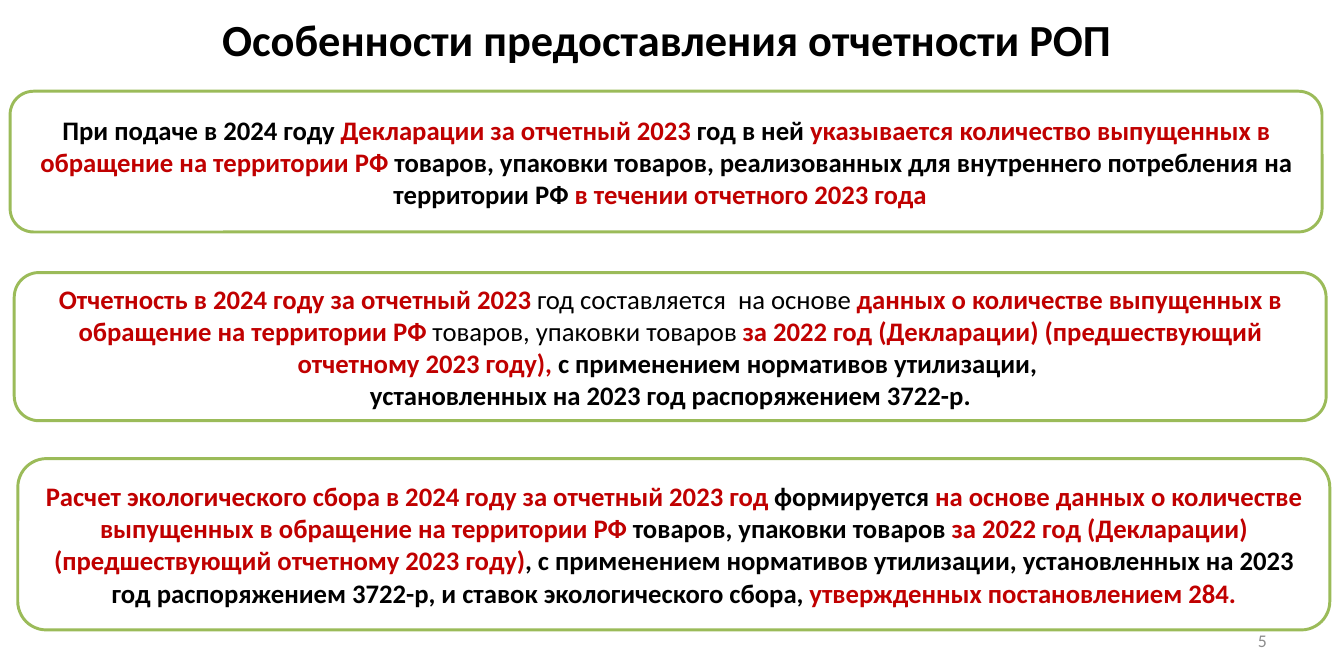
import pptx
import pptx.dml.color
import pptx.enum.shapes
import pptx.enum.text
import pptx.util

Pt = pptx.util.Pt
RGBColor = pptx.dml.color.RGBColor
ALIGN = pptx.enum.text.PP_ALIGN

BLACK = RGBColor(0x00, 0x00, 0x00)
RED = RGBColor(0xC0, 0x00, 0x00)
GREEN = RGBColor(0x9B, 0xBB, 0x59)
GRAY = RGBColor(0x8C, 0x8C, 0x8C)
WHITE = RGBColor(0xFF, 0xFF, 0xFF)
FONT = "Calibri"

BOX_WIDTH = 442.8

# Each paragraph is a list of runs: text, colour, bold.
DECLARATION = [[
    ("При подаче в 2024 году ", BLACK, True),
    ("Декларации за отчетный 2023 ", RED, True),
    ("год в ней ", BLACK, True),
    ("указывается количество выпущенных в обращение на территории РФ ", RED, True),
    ("товаров, упаковки товаров, реализованных для внутреннего потребления "
     "на территории РФ ", BLACK, True),
    ("в течении отчетного 2023 года  ", RED, True),
]]
REPORTING = [
    [
        ("Отчетность в 2024 году за отчетный 2023 ", RED, True),
        ("год составляется  на основе ", BLACK, False),
        ("данных о количестве выпущенных в обращение на территории РФ", RED, True),
        (" товаров, упаковки товаров ", BLACK, False),
        ("за 2022 год (Декларации) (предшествующий отчетному 2023 году), ", RED, True),
        ("с применением нормативов утилизации, ", BLACK, True),
    ],
    [("установленных на 2023 год распоряжением 3722-р.", BLACK, True)],
]
ECO_FEE = [[
    ("Расчет экологического сбора в 2024 году за отчетный 2023 год ", RED, True),
    ("формируется ", BLACK, True),
    ("на основе данных о количестве выпущенных в обращение на территории РФ", RED, True),
    (" товаров, упаковки товаров ", BLACK, True),
    ("за 2022 год (Декларации) (предшествующий отчетному 2023 году)", RED, True),
    (", с применением нормативов утилизации, установленных на 2023 год "
     "распоряжением 3722-р, и ставок экологического сбора, ", BLACK, True),
    ("утвержденных постановлением 284.", RED, True),
]]

# Left, top, height, paragraphs
BOXES = [
    (3.4, 30.8, 47.5, DECLARATION),
    (4.8, 92.0, 50.0, REPORTING),
    (6.0, 154.8, 57.8, ECO_FEE),
]


def write_text(shape, paragraphs, size, alignment=ALIGN.CENTER):
    frame = shape.text_frame
    frame.word_wrap = True
    frame.auto_size = pptx.enum.text.MSO_AUTO_SIZE.NONE
    frame.vertical_anchor = pptx.enum.text.MSO_ANCHOR.MIDDLE
    frame.margin_left = frame.margin_right = Pt(3.6)
    frame.margin_top = frame.margin_bottom = Pt(1.8)
    for index, runs in enumerate(paragraphs):
        paragraph = frame.add_paragraph() if index else frame.paragraphs[0]
        paragraph.alignment = alignment
        for text, color, bold in runs:
            run = paragraph.add_run()
            run.text = text
            run.font.name = FONT
            run.font.size = Pt(size)
            run.font.bold = bold
            run.font.color.rgb = color


def set_title(slide, text):
    title = slide.shapes.title
    title.left, title.top = Pt(0), Pt(3.6)
    title.width, title.height = Pt(453.6), Pt(19)
    write_text(title, [[(text, BLACK, True)]], 15)


def add_page_number(slide, number):
    text_box = slide.shapes.add_textbox(Pt(325.4), Pt(210.2), Pt(105.8), Pt(12.2))
    write_text(text_box, [[(number, GRAY, False)]], 6, ALIGN.RIGHT)


def add_rounded_box(slide, left, top, height, paragraphs):
    box = slide.shapes.add_shape(
        pptx.enum.shapes.MSO_SHAPE.ROUNDED_RECTANGLE,
        Pt(left), Pt(top), Pt(BOX_WIDTH), Pt(height))
    box.shadow.inherit = False
    box.fill.solid()
    box.fill.fore_color.rgb = WHITE
    box.line.color.rgb = GREEN
    box.line.width = Pt(1)
    write_text(box, paragraphs, 9)


def main():
    presentation = pptx.Presentation()
    presentation.slide_width = Pt(453.6)
    presentation.slide_height = Pt(226.8)
    title_only = presentation.slide_layouts.get_by_name("Title Only")
    slide = presentation.slides.add_slide(title_only)
    set_title(slide, "Особенности предоставления отчетности РОП ")
    add_page_number(slide, "5")
    for left, top, height, paragraphs in BOXES:
        add_rounded_box(slide, left, top, height, paragraphs)
    presentation.save("out.pptx")


if __name__ == "__main__":
    main()
